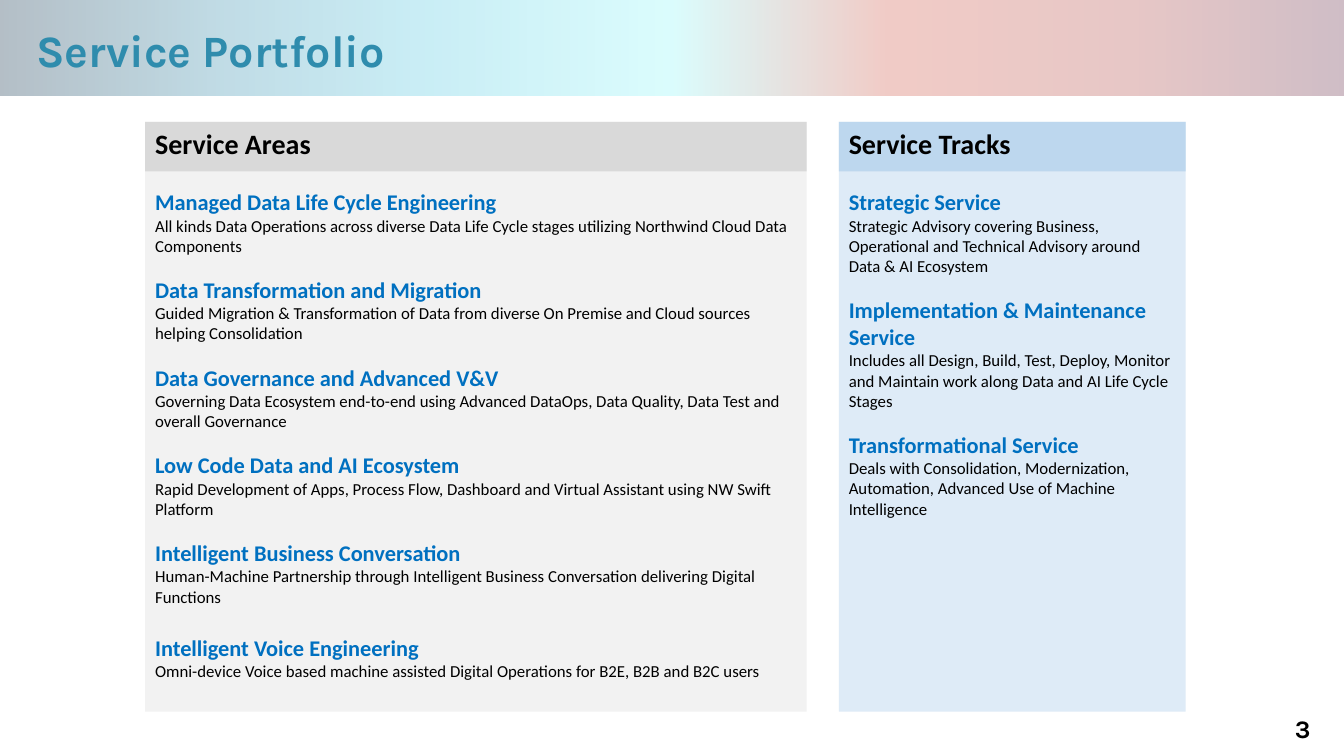
import pptx
import pptx.dml.color
import pptx.enum.shapes
import pptx.enum.text
import pptx.oxml
import pptx.oxml.ns
import pptx.util

Inches, Pt = pptx.util.Inches, pptx.util.Pt
RGBColor = pptx.dml.color.RGBColor
Anchor = pptx.enum.text.MSO_ANCHOR
Align = pptx.enum.text.PP_ALIGN

# Content
TITLE = "Service Portfolio"
PAGE_NUMBER = "3"
AREAS = [
    ("Managed Data Life Cycle Engineering",
     "All kinds Data Operations across diverse Data Life Cycle stages utilizing Northwind Cloud Data Components"),
    ("Data Transformation and Migration",
     "Guided Migration & Transformation of Data from diverse On Premise and Cloud sources helping Consolidation"),
    ("Data Governance and Advanced V&V",
     "Governing Data Ecosystem end-to-end using Advanced DataOps, Data Quality, Data Test and overall Governance"),
    ("Low Code Data and AI Ecosystem",
     "Rapid Development of Apps, Process Flow, Dashboard and Virtual Assistant using NW Swift Platform"),
    ("Intelligent Business Conversation",
     "Human-Machine Partnership through Intelligent Business Conversation delivering Digital Functions"),
    ("Intelligent Voice Engineering",
     "Omni-device Voice based machine assisted Digital Operations for B2E, B2B and B2C users"),
]
TRACKS = [
    ("Strategic Service",
     "Strategic Advisory covering Business, Operational and Technical Advisory around Data & AI Ecosystem"),
    ("Implementation & Maintenance Service",
     "Includes all Design, Build, Test, Deploy, Monitor and Maintain work along Data and AI Life Cycle Stages"),
    ("Transformational Service",
     "Deals with Consolidation, Modernization, Automation, Advanced Use of Machine Intelligence"),
]

# Colours
BLACK = RGBColor(0x00, 0x00, 0x00)
WHITE = RGBColor(0xFF, 0xFF, 0xFF)
TEAL = RGBColor(0x2F, 0x8C, 0xAD)
BLUE = RGBColor(0x00, 0x70, 0xC0)
GREY_HEAD = RGBColor(0xD9, 0xD9, 0xD9)
GREY_BODY = RGBColor(0xF2, 0xF2, 0xF2)
BLUE_HEAD = RGBColor(0xBD, 0xD7, 0xEE)
BLUE_BODY = RGBColor(0xDE, 0xEB, 0xF7)
BAND_STOPS = [
    (0, RGBColor(0x04, 0x28, 0x43)), (17, TEAL),
    (31, RGBColor(0x4B, 0xC4, 0xDF)), (50, RGBColor(0x86, 0xF7, 0xF9)),
    (66, RGBColor(0xD0, 0x53, 0x42)), (84, RGBColor(0xB1, 0x45, 0x40)),
    (100, RGBColor(0x60, 0x24, 0x41)),
]

# Panels: left, width, heading, items, heading fill, body fill, last gap
PANELS = [
    (1.44, 6.56, "Service Areas", AREAS, GREY_HEAD, GREY_BODY, 19.5),
    (8.32, 3.44, "Service Tracks", TRACKS, BLUE_HEAD, BLUE_BODY, 14.65),
]
PANEL_TOP, PANEL_HEIGHT, HEAD_HEIGHT = 1.21, 5.85, 0.49
ITEM_GAP = 14.65
SLIDE_WIDTH, SLIDE_HEIGHT = 13.33, 7.5

deck = pptx.Presentation()
deck.slide_width, deck.slide_height = Inches(SLIDE_WIDTH), Inches(SLIDE_HEIGHT)
page = deck.slides.add_slide(deck.slide_layouts[5])


def add_rectangle(left, top, width, height, color):
    box = page.shapes.add_shape(
        pptx.enum.shapes.MSO_SHAPE.RECTANGLE,
        Inches(left), Inches(top), Inches(width), Inches(height))
    box.shadow.inherit = False
    box.line.fill.background()
    box.fill.solid()
    box.fill.fore_color.rgb = color
    return box


def write(box, text, *, size, color=BLACK, font="Calibri", bold=False,
          align=Align.LEFT, anchor=Anchor.TOP, wrap=True, gap=0, first=True):
    frame = box.text_frame
    frame.word_wrap = wrap
    frame.vertical_anchor = anchor
    para = frame.paragraphs[0] if first else frame.add_paragraph()
    para.alignment = align
    if gap:
        para.space_before = Pt(gap)
    span = para.add_run()
    span.text = text
    span.font.name, span.font.size, span.font.bold = font, Pt(size), bold
    span.font.color.rgb = color


# Title band: a gradient under a translucent white sheet
band = add_rectangle(0, 0, SLIDE_WIDTH, 0.95, WHITE)
band.fill.gradient()
band.fill.gradient_angle = 0
stop_list = band.element.spPr.find(".//" + pptx.oxml.ns.qn("a:gsLst"))
for stop in list(stop_list):
    stop_list.remove(stop)
for position, color in BAND_STOPS:
    stop_list.append(pptx.oxml.parse_xml(
        f'<a:gs {pptx.oxml.ns.nsdecls("a")} pos="{position * 1000}">'
        f'<a:srgbClr val="{color}"/></a:gs>'))
sheet = add_rectangle(0, 0, SLIDE_WIDTH, SLIDE_HEIGHT, WHITE)
sheet_color = sheet.element.spPr.find(".//" + pptx.oxml.ns.qn("a:srgbClr"))
sheet_color.append(pptx.oxml.parse_xml(
    f'<a:alpha {pptx.oxml.ns.nsdecls("a")} val="70000"/>'))

# Title, raised above the band
title = page.shapes.title
sheet.element.addnext(title.element)
title.left, title.top = Inches(0.26), Inches(0.18)
title.width, title.height = Inches(10.62), Inches(0.64)
title.text_frame.auto_size = pptx.enum.text.MSO_AUTO_SIZE.NONE
write(title, TITLE, size=32, color=TEAL, font="Karla", bold=True)

# Page number
number = page.shapes.add_textbox(Inches(12.52), Inches(6.95), Inches(0.8), Inches(0.55))
write(number, PAGE_NUMBER, size=18, font="Karla", bold=True,
      align=Align.CENTER, anchor=Anchor.MIDDLE)

# Service panels with their heading bars
for left, width, heading, items, head_fill, body_fill, last_gap in PANELS:
    body = add_rectangle(left, PANEL_TOP, width, PANEL_HEIGHT, body_fill)
    body.text_frame.margin_top = Inches(0.66)
    for index, (name, detail) in enumerate(items):
        gap = last_gap if index == len(items) - 1 else ITEM_GAP
        write(body, name, size=16, color=BLUE, bold=True,
              gap=gap if index else 0, first=index == 0)
        write(body, detail, size=12, first=False)
    head = add_rectangle(left, PANEL_TOP, width, HEAD_HEIGHT, head_fill)
    write(head, heading, size=20, bold=True, wrap=False)

deck.save("out.pptx")
